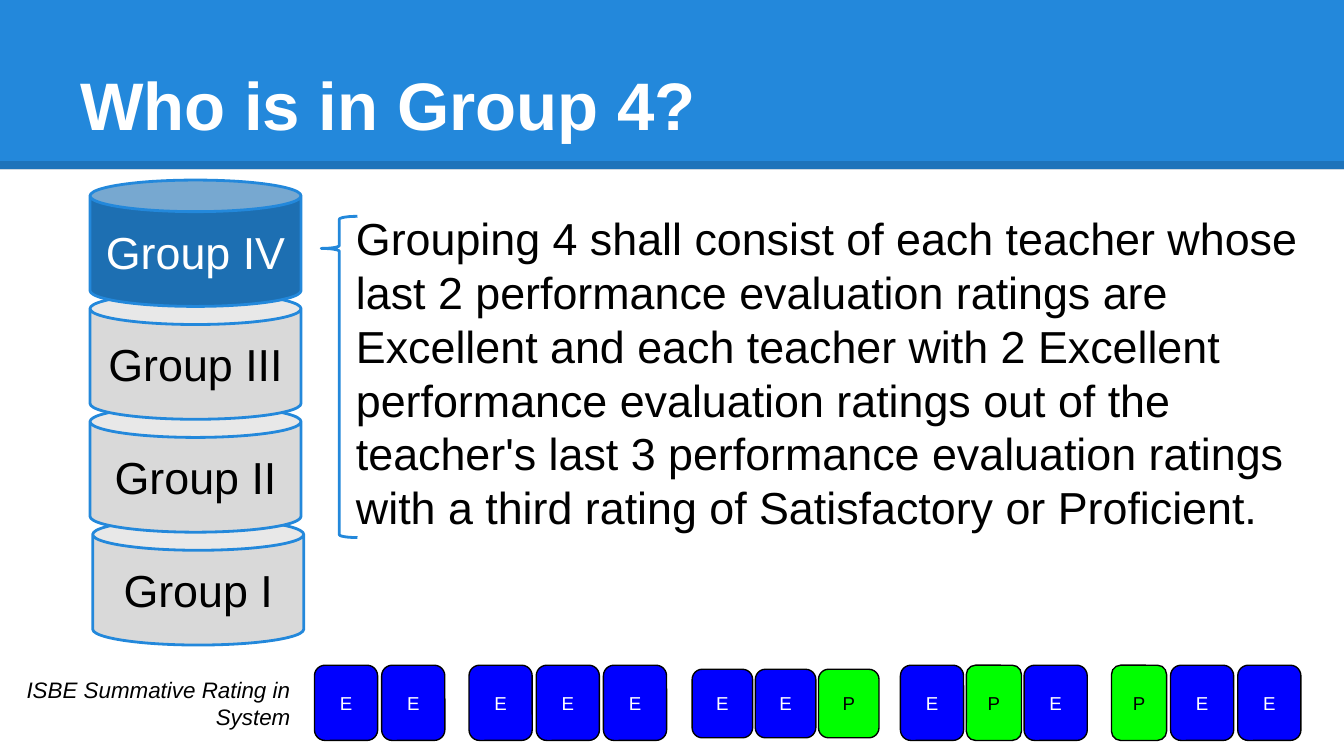
from dataclasses import dataclass

import pptx
import pptx.dml.color
import pptx.enum.shapes
import pptx.enum.text
import pptx.oxml
import pptx.oxml.ns
import pptx.util
from pptx.util import Inches

SHAPE = pptx.enum.shapes.MSO_SHAPE
ALIGN = pptx.enum.text.PP_ALIGN
ANCHOR = pptx.enum.text.MSO_ANCHOR

BLUE, DARK_BLUE, GREY = "2388DB", "1D6FB2", "D9D9D9"
BLACK, WHITE = "000000", "FFFFFF"


@dataclass
class Place:
    left: float
    top: float
    width: float
    height: float

    def lengths(self) -> tuple:
        return tuple(Inches(n) for n in (self.left, self.top, self.width, self.height))


@dataclass
class Group:
    name: str
    left: float = 0.67
    fill: str = GREY
    color: str = BLACK
    alpha: int = 100


@dataclass
class RatingSet:
    ratings: str
    left: float
    gap: float
    top: float = 4.95
    height: float = 0.56
    width: float = 0.0  # 0 means the usual width of each rating


@dataclass
class Rating:
    fill: str
    color: str
    width: float


RATINGS = {"E": Rating("0000FF", WHITE, 0.47), "P": Rating("00FF00", BLACK, 0.41)}

# Bottom group first, so that each can overlaps the one below it
GROUPS = [
    Group("Group I", left=0.69, fill=BLACK, alpha=15),
    Group("Group II"),
    Group("Group III"),
    Group("Group IV", fill=DARK_BLUE, color=WHITE),
]

RATING_SETS = [
    RatingSet("EE", 2.34, 0.03),
    RatingSet("EEE", 3.49, 0.03),
    RatingSet("EEP", 5.15, 0.02, top=4.98, height=0.51, width=0.45),
    RatingSet("EPE", 6.7, 0.02),
    RatingSet("PEE", 8.27, 0.03),
]

BODY = (
    "Grouping 4 shall consist of each teacher whose last 2 performance evaluation "
    "ratings are Excellent and each teacher with 2 Excellent performance evaluation "
    "ratings out of the teacher's last 3 performance evaluation ratings with a third "
    "rating of Satisfactory or Proficient."
)


def paint(target, color: str, alpha: int = 100) -> None:
    """Give a fill a solid colour, with an opacity in percent."""
    target.solid()
    target.fore_color.rgb = pptx.dml.color.RGBColor.from_string(color)
    if alpha < 100:
        for node in target._xPr.iter(pptx.oxml.ns.qn("a:srgbClr")):
            node.append(pptx.oxml.parse_xml(
                f'<a:alpha {pptx.oxml.ns.nsdecls("a")} val="{alpha * 1000}"/>'))


def write(box, text: str, size: float, color: str, align=ALIGN.LEFT,
          anchor=ANCHOR.MIDDLE, **font_format) -> None:
    frame = box.text_frame
    frame_format = dict.fromkeys(
        ("margin_left", "margin_top", "margin_right", "margin_bottom"), Inches(0.1))
    frame_format |= {"word_wrap": True, "vertical_anchor": anchor}
    para = frame.paragraphs[0]
    span = para.add_run()
    span.text = text
    formats = [
        (frame, frame_format),
        (para, {"alignment": align}),
        (span.font, {"name": "Arial", "size": pptx.util.Pt(size), **font_format}),
    ]
    for target, values in formats:
        for name, value in values.items():
            setattr(target, name, value)
    paint(span.font.fill, color)


def add_text(page, place: Place, text: str, size: float, color: str, **text_format) -> None:
    write(page.shapes.add_textbox(*place.lengths()), text, size, color, **text_format)


def add_shape(page, kind, place: Place, fill: str = "", line: str = "",
              line_width: float = 1.5, alpha: int = 100, adjust: tuple = ()):
    shape = page.shapes.add_shape(kind, *place.lengths())
    shape.shadow.inherit = False
    for index, value in enumerate(adjust):
        shape.adjustments[index] = value
    if fill:
        paint(shape.fill, fill, alpha)
    else:
        shape.fill.background()
    if line:
        paint(shape.line.fill, line)
        shape.line.width = pptx.util.Pt(line_width)
    else:
        shape.line.fill.background()
    return shape


def add_rule(page, top: float, color: str, width: float, alpha: int) -> None:
    rule = page.shapes.add_connector(
        pptx.enum.shapes.MSO_CONNECTOR.STRAIGHT,
        Inches(0), Inches(top), Inches(10), Inches(top))
    rule.line.width = pptx.util.Pt(width)
    paint(rule.line.fill, color, alpha)
    rule._element.spPr.append(
        pptx.oxml.parse_xml(f'<a:effectLst {pptx.oxml.ns.nsdecls("a")}/>'))


def add_groups(page) -> None:
    for step, group in enumerate(GROUPS):
        place = Place(group.left, 3.86 - 0.84 * step, 1.57, 0.94)
        can = add_shape(page, SHAPE.CAN, place, group.fill, BLUE,
                        alpha=group.alpha, adjust=(0.25,))
        write(can, group.name, 24, group.color, align=ALIGN.CENTER)


def add_rating_set(page, rating_set: RatingSet) -> None:
    left = rating_set.left
    for letter in rating_set.ratings:
        rating = RATINGS[letter]
        width = rating_set.width or rating.width
        place = Place(left, rating_set.top, width, rating_set.height)
        tile = add_shape(page, SHAPE.ROUNDED_RECTANGLE, place, rating.fill, BLACK, 0.75)
        write(tile, letter, 10, rating.color, align=ALIGN.CENTER)
        left += width + rating_set.gap


def main() -> None:
    # Widescreen page, 16 to 9
    deck = pptx.Presentation()
    deck.slide_width = Inches(10)
    deck.slide_height = Inches(10 * 9 / 16)
    page = deck.slides.add_slide(deck.slide_layouts[6])

    # Title band
    add_shape(page, SHAPE.RECTANGLE, Place(0, 0, 10, 1.26), BLUE)
    add_rule(page, 1.23, BLACK, 4.5, alpha=15)
    add_text(page, Place(0.5, 0.23, 9, 0.94), "Who is in Group 4?", 36, WHITE,
             anchor=ANCHOR.BOTTOM, bold=True)

    # Definition, with the stack of groups and its brace
    add_text(page, Place(2.55, 1.39, 7.28, 2.68), BODY, 24, BLACK, anchor=ANCHOR.BOTTOM)
    add_groups(page)
    add_shape(page, SHAPE.LEFT_BRACE, Place(2.39, 1.61, 0.27, 2.39), line=BLUE,
              adjust=(0.08, 0.1))

    # Rating combinations
    add_text(page, Place(0.06, 5.01, 2.2, 0.44), "ISBE Summative Rating in System",
             12, BLACK, align=ALIGN.RIGHT, italic=True)
    for rating_set in RATING_SETS:
        add_rating_set(page, rating_set)

    deck.save("out.pptx")


if __name__ == "__main__":
    main()
